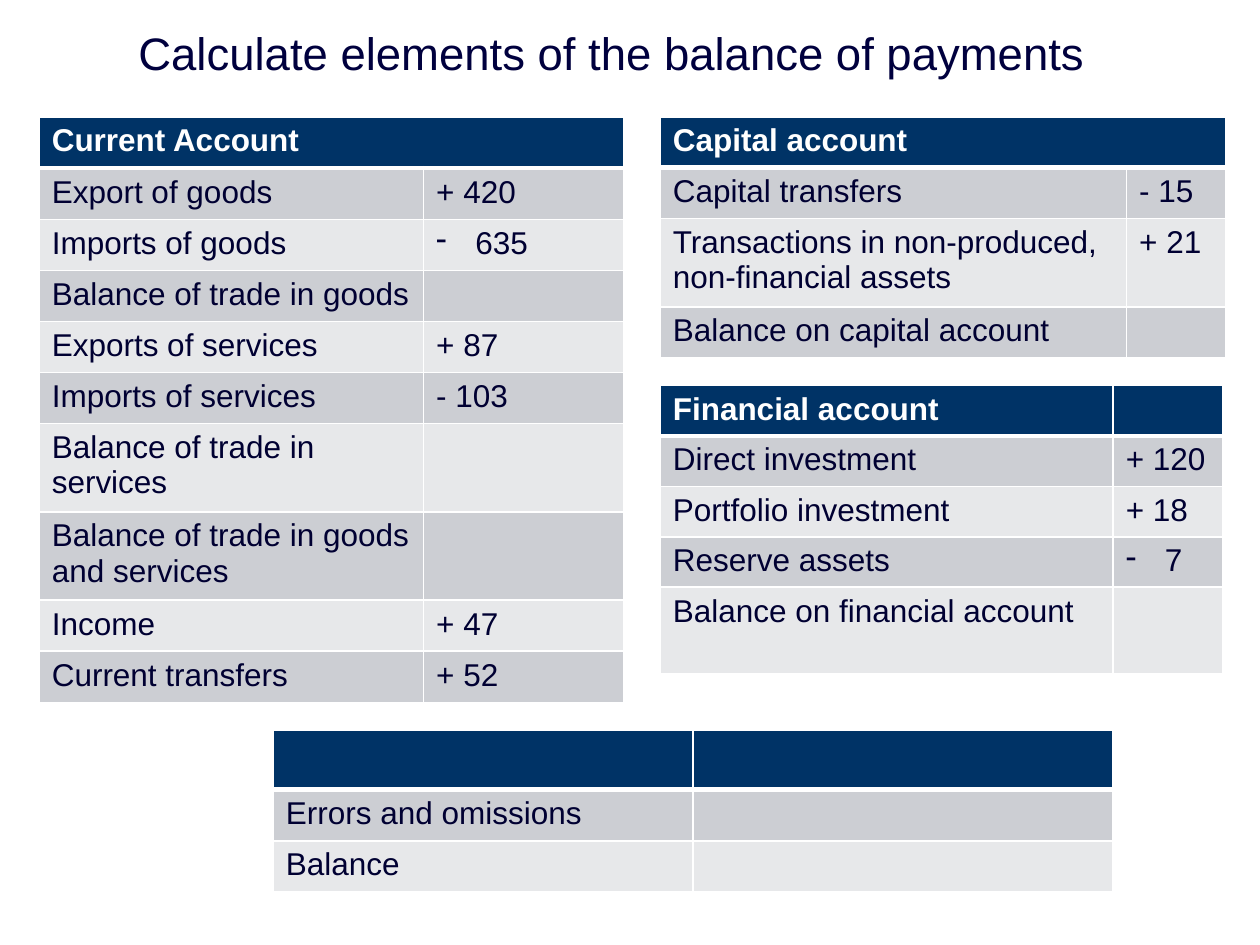
"""Build a slide of balance of payments tables to be completed."""
from lxml import etree
from pptx import Presentation
from pptx.dml.color import RGBColor
from pptx.enum.text import MSO_ANCHOR
from pptx.oxml.ns import qn
from pptx.util import Cm, Pt

MIDDLE = MSO_ANCHOR.MIDDLE
FONT = "Arial"
NAVY, INK, TITLE_INK, WHITE = "003366", "000032", "00003E", "FFFFFF"
BANDS = ("E7E8EA", "CCCED3")
INDENT = Cm(0.79)

TITLE = "Calculate elements of the balance of payments"
BULLETED = {"635", "7"}
TABLES = [
    {"at": (0.79, 2.36), "cols": (7.75, 4.04), "heights": [1.03] * 10, "rows": [
        ("Current Account", None),
        ("Export of goods", "+ 420"),
        ("Imports of goods", "635"),
        ("Balance of trade in goods", ""),
        ("Exports of services", "+ 87"),
        ("Imports of services", "- 103"),
        ("Balance of trade in services", ""),
        ("Balance of trade in goods and services", ""),
        ("Income", "+ 47"),
        ("Current transfers", "+ 52")]},
    {"at": (13.31, 2.36), "cols": (9.4, 2.01), "heights": [0.79] + [1.03] * 3, "rows": [
        ("Capital account", None),
        ("Capital transfers", "- 15"),
        ("Transactions in non-produced, non-financial assets", "+ 21"),
        ("Balance on capital account", "")]},
    {"at": (13.31, 7.77), "cols": (9.13, 2.2), "heights": [1.01] * 4 + [1.75], "rows": [
        ("Financial account", ""),
        ("Direct investment", "+ 120"),
        ("Portfolio investment", "+ 18"),
        ("Reserve assets", "7"),
        ("Balance on financial account", "")]},
    {"at": (5.51, 14.73), "cols": (8.46, 8.46), "heights": [1.19, 1.03, 1.03], "rows": [
        ("", ""),
        ("Errors and omissions", ""),
        ("Balance", "")]},
]


def rgb(color):
    return RGBColor.from_string(color)


def set_font(font, size, color, bold=False):
    font.name, font.size, font.bold = FONT, Pt(size), bold
    font.color.rgb = rgb(color)


def add_borders(cell, widths):
    tc_pr = cell._tc.get_or_add_tcPr()
    for i, (side, width) in enumerate(widths.items()):
        ln = etree.Element(qn(f"a:ln{side}"), w=str(Pt(width)))
        fill = etree.SubElement(ln, qn("a:solidFill"))
        etree.SubElement(fill, qn("a:srgbClr"), val=WHITE)
        tc_pr.insert(i, ln)


def add_dash(p):
    p_pr = p._p.get_or_add_pPr()
    p_pr.set("marL", str(INDENT))
    p_pr.set("indent", str(-INDENT))
    etree.SubElement(p_pr, qn("a:buFontTx"))
    etree.SubElement(p_pr, qn("a:buChar"), char="-")


def fill_cell(cell, text, row):
    header = row == 0
    cell.fill.solid()
    cell.fill.fore_color.rgb = rgb(NAVY if header else BANDS[row % 2])
    add_borders(cell, {"L": 1, "R": 1, "T": 3 if row == 1 else 1, "B": 3 if header else 1})
    p = cell.text_frame.paragraphs[0]
    if text in BULLETED:
        add_dash(p)
    if text:
        p.text = text
        set_font(p.runs[0].font, 18, WHITE if header else INK, header)


def add_account(s, at, cols, heights, rows):
    left, top = map(Cm, at)
    frame = s.shapes.add_table(len(rows), len(cols), left, top, Cm(sum(cols)), Cm(sum(heights)))
    table = frame.table
    for col, width in zip(table.columns, cols):
        col.width = Cm(width)
    for i, (values, height) in enumerate(zip(rows, heights)):
        table.rows[i].height = Cm(height)
        for j, text in enumerate(values):
            fill_cell(table.cell(i, j), text, i)
    if rows[0][1] is None:
        table.cell(0, 0).merge(table.cell(0, 1))


def main():
    prs = Presentation()
    prs.slide_width, prs.slide_height = Cm(25.4), Cm(19.05)
    s = prs.slides.add_slide(prs.slide_layouts[6])
    tf = s.shapes.add_textbox(Cm(2.54), Cm(0.41), Cm(22.86), Cm(1.3)).text_frame
    tf.word_wrap = True
    tf.vertical_anchor = MIDDLE
    tf.text = TITLE
    set_font(tf.paragraphs[0].runs[0].font, 26, TITLE_INK)
    for account in TABLES:
        add_account(s, **account)
    prs.save("out.pptx")


if __name__ == "__main__":
    main()
